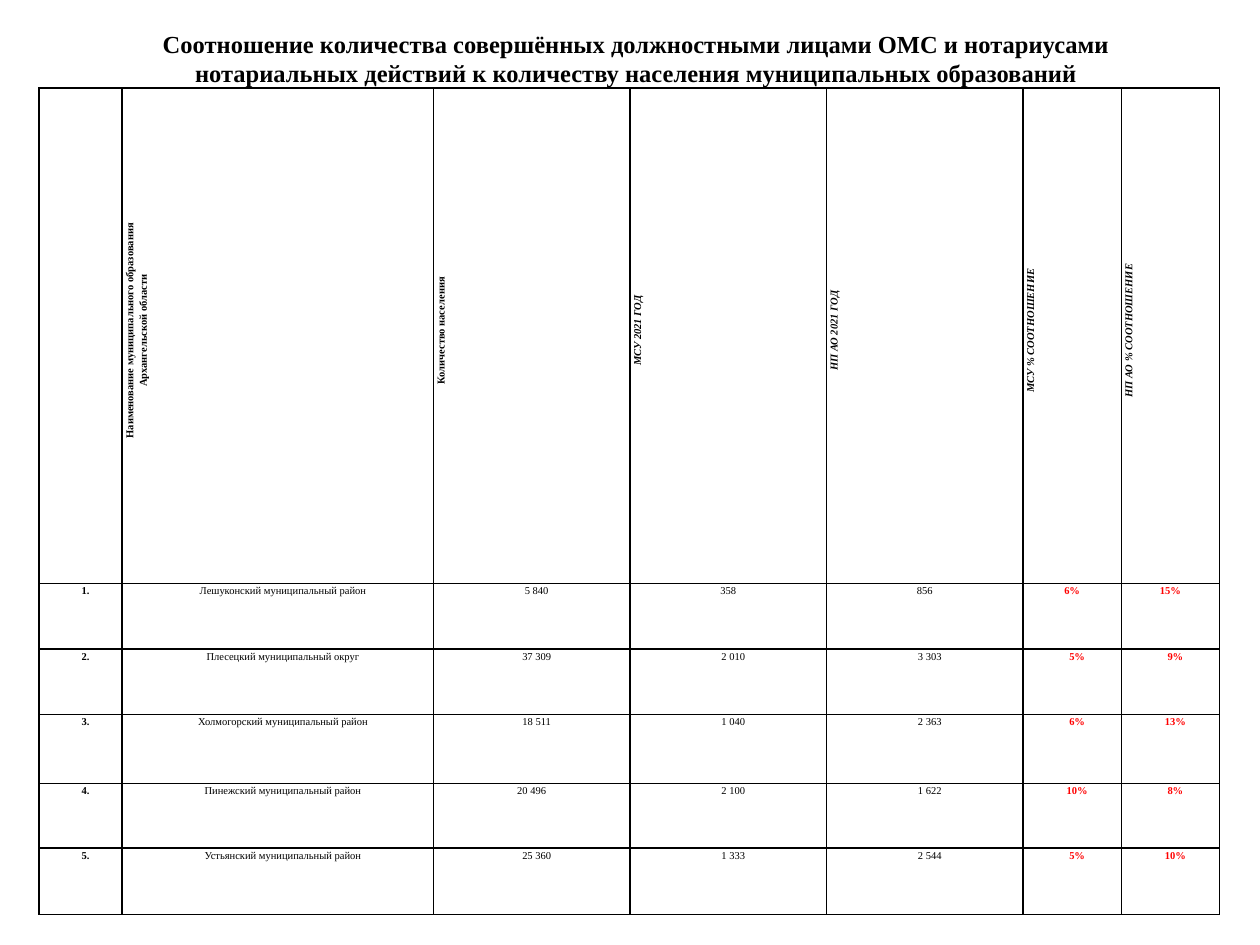
from dataclasses import dataclass

from lxml import etree
from pptx import Presentation
from pptx.dml.color import RGBColor
from pptx.enum import text as t
from pptx.oxml import ns
from pptx.util import Inches, Pt

FONT = "Times New Roman"
BLACK, RED = "000000", "FF0000"
COLS = [0.66, 2.47, 1.56, 1.56, 1.56, 0.78, 0.78]
ROWS = [3.93, 0.52, 0.52, 0.55, 0.51, 0.53]
INDENT = 0.08


@dataclass
class Style:
    bold: bool = False
    slant: bool = False
    color: str = BLACK
    gap: float = 0  # points above the first line
    size: float = 6


HEAD = Style(bold=True, gap=8.6)
SLANT = Style(bold=True, slant=True, gap=8.6)
INDEX = Style(bold=True, gap=8.6)
NAME = Style()
COUNT = Style(gap=6.9)
SHARE = Style(bold=True, color=RED, gap=8.6)
TITLE = Style(bold=True, size=14)

HEADS = [
    "",
    "Наименование муниципального образования\nАрхангельской области",
    "Количество населения",
    "МСУ 2021 ГОД",
    "НП АО 2021 ГОД",
    "МСУ % СООТНОШЕНИЕ",
    "НП АО % СООТНОШЕНИЕ",
]
DATA = [
    ["1.", "Лешуконский муниципальный район", "5 840", "358", "856", "6%", "15%"],
    ["2.", "Плесецкий муниципальный округ", "37 309", "2 010", "3 303", "5%", "9%"],
    ["3.", "Холмогорский муниципальный район", "18 511", "1 040", "2 363", "6%", "13%"],
    ["4.", "Пинежский муниципальный район", "20 496", "2 100", "1 622", "10%", "8%"],
    ["5.", "Устьянский муниципальный район", "25 360", "1 333", "2 544", "5%", "10%"],
]
HEAD_STYLES = [HEAD] * 3 + [SLANT] * 4
DATA_STYLES = [INDEX, NAME] + [COUNT] * 3 + [SHARE] * 2
# Cells (row, column) whose text has no left indent
FLUSH = {(1, 3), (1, 4), (1, 5), (1, 6), (4, 2)}


def paint(fill, color: str) -> None:
    fill.solid()
    fill.fore_color.rgb = RGBColor.from_string(color)


def add_run(para, words: str, style: Style) -> None:
    run = para.add_run()
    run.text = words
    font = run.font
    font.name, font.size = FONT, Pt(style.size)
    font.bold, font.italic = style.bold, style.slant
    paint(font.fill, style.color)


def add_edges(cell) -> None:
    props = cell._tc.get_or_add_tcPr()
    for spot, side in enumerate(("lnL", "lnR", "lnT", "lnB")):
        line = etree.Element(ns.qn(f"a:{side}"), w=str(Pt(1)))
        fill = etree.SubElement(line, ns.qn("a:solidFill"))
        etree.SubElement(fill, ns.qn("a:srgbClr"), val=BLACK)
        props.insert(spot, line)


def fill_cell(cell, words: str, style: Style, indent: float) -> None:
    cell.margin_left = cell.margin_right = Inches(0.05)
    cell.margin_top = cell.margin_bottom = 0
    cell.fill.background()
    add_edges(cell)
    if not words:
        return
    frame = cell.text_frame
    for num, line in enumerate(words.split("\n")):
        para = frame.add_paragraph() if num else frame.paragraphs[0]
        para.alignment = t.PP_ALIGN.CENTER
        para.line_spacing = 1.15
        para.space_before = Pt(0 if num else style.gap)
        props = para._p.get_or_add_pPr()
        props.set("marL", str(Inches(indent)))
        props.set("indent", "0")
        add_run(para, line, style)


def add_grid(slide) -> None:
    frame = slide.shapes.add_table(len(ROWS), len(COLS), Inches(0.31), Inches(0.7),
                                   Inches(sum(COLS)), Inches(sum(ROWS)))
    table = frame.table
    table.horz_banding = False
    for col, width in zip(table.columns, COLS):
        col.width = Inches(width)
    for row, (high, words) in enumerate(zip(ROWS, [HEADS] + DATA)):
        table.rows[row].height = Inches(high)
        styles = DATA_STYLES if row else HEAD_STYLES
        for col, (word, style) in enumerate(zip(words, styles)):
            cell = table.cell(row, col)
            fill_cell(cell, word, style, 0 if (row, col) in FLUSH else INDENT)
            if not row and word:
                cell._tc.get_or_add_tcPr().set("vert", "vert270")


def add_title(slide) -> None:
    title = slide.shapes.title
    title.left, title.top = Inches(0.55), Inches(0.16)
    title.width, title.height = Inches(9), Inches(1.25)
    frame = title.text_frame
    frame.word_wrap = True
    frame.auto_size = t.MSO_AUTO_SIZE.NONE
    frame.vertical_anchor = t.MSO_ANCHOR.TOP
    frame.margin_top = Inches(0.07)
    para = frame.paragraphs[0]
    para.alignment = t.PP_ALIGN.CENTER
    add_run(para, "Соотношение количества совершённых должностными лицами ОМС и "
                  "нотариусами нотариальных действий к количеству населения "
                  "муниципальных образований", TITLE)


def main() -> None:
    deck = Presentation()
    deck.slide_width, deck.slide_height = Inches(10), Inches(7.5)
    slide = deck.slides.add_slide(deck.slide_layouts[5])
    paint(slide.background.fill, "FFFFFF")
    # Table under the title
    add_grid(slide)
    add_title(slide)
    deck.save("out.pptx")


if __name__ == "__main__":
    main()
